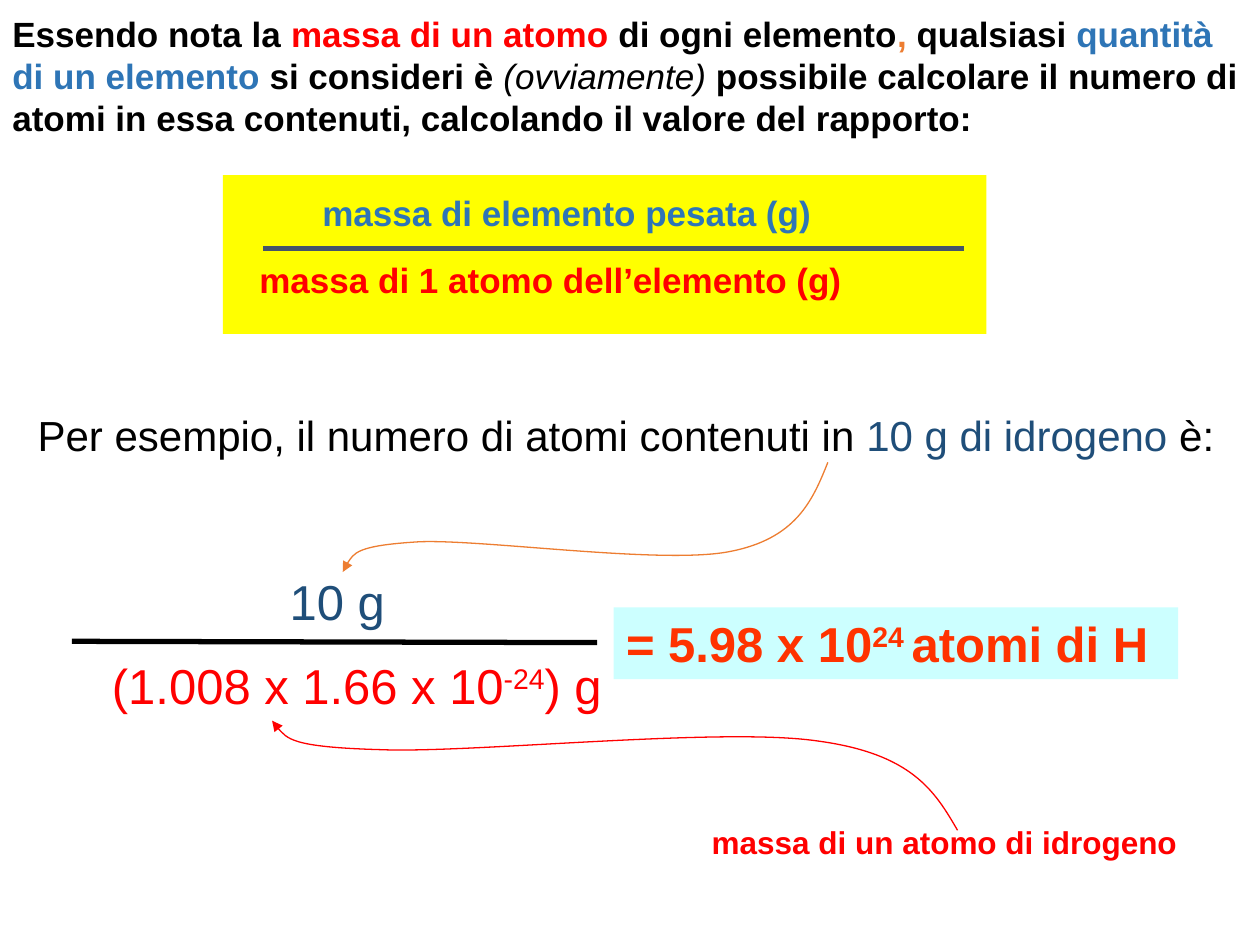
from dataclasses import dataclass

from lxml.etree import SubElement
from pptx import Presentation
from pptx.dml.color import RGBColor
from pptx.enum.shapes import MSO_CONNECTOR, MSO_SHAPE
from pptx.enum.text import MSO_ANCHOR, MSO_AUTO_SIZE, PP_ALIGN
from pptx.oxml.ns import qn
from pptx.util import Inches, Pt

COLUMNS, ROWS = 100, 75
WIDTH, HEIGHT = Inches(10), Inches(7.5)


@dataclass(frozen=True)
class Theme:
    """Colours, type sizes and line widths of the slide."""
    font: str = "Arial"
    black: str = "000000"
    red: str = "FF0000"
    blue: str = "2E75B6"
    navy: str = "1F4E79"
    orange: str = "ED7D31"
    slate: str = "44546A"
    result: str = "FF3300"
    yellow: str = "FFFF00"
    cyan: str = "CCFFFF"
    label: int = 18
    body: int = 20
    example: int = 24
    formula: int = 28
    bar: float = 3
    curve: float = 0.75


THEME = Theme()


def column(number):
    """Return the horizontal length of a number of grid columns."""
    return round(WIDTH * number / COLUMNS)


def row(number):
    """Return the vertical length of a number of grid rows."""
    return round(HEIGHT * number / ROWS)


def place(left, top, width, height):
    """Turn a grid area into slide lengths."""
    return column(left), row(top), column(width), row(height)


def color(value):
    """Return a colour object for a hexadecimal value."""
    return RGBColor.from_string(value)


def write(box, spans, size, bold=False, wrap=True):
    """Fill a box with one paragraph of (text, colour, style) spans."""
    frame = box.text_frame
    frame.word_wrap = wrap
    frame.auto_size = MSO_AUTO_SIZE.SHAPE_TO_FIT_TEXT
    frame.vertical_anchor = MSO_ANCHOR.TOP
    para = frame.paragraphs[0]
    para.alignment = PP_ALIGN.LEFT
    para.font.name, para.font.size, para.font.bold = THEME.font, Pt(size), bold
    for text, ink, *style in spans:
        span = para.add_run()
        span.text = text
        span.font.color.rgb = color(ink)
        if "italic" in style:
            span.font.bold, span.font.italic = False, True
        if "superscript" in style:
            span.font._element.set("baseline", "30000")


def add_text(shapes, area, spans, size, **options):
    """Add a text box."""
    write(shapes.add_textbox(*place(*area)), spans, size, **options)


def add_panel(shapes, area, fill):
    """Add a plain filled rectangle."""
    panel = shapes.add_shape(MSO_SHAPE.RECTANGLE, *place(*area))
    panel.shadow.inherit = False
    panel.fill.solid()
    panel.fill.fore_color.rgb = color(fill)
    panel.line.fill.background()
    return panel


def add_bar(shapes, start, end, ink):
    """Add a fraction bar between two grid points."""
    bar = shapes.add_connector(MSO_CONNECTOR.STRAIGHT, column(start[0]), row(start[1]),
                               column(end[0]), row(end[1]))
    bar.line.color.rgb = color(ink)
    bar.line.width = Pt(THEME.bar)
    SubElement(bar._element.spPr, qn("a:effectLst"))


def add_curved_arrow(shapes, points, ink):
    """Add a Bézier arrow: a start, then three points for each segment."""
    start, *rest = [(column(x), row(y)) for x, y in points]
    builder = shapes.build_freeform(*start)
    builder.add_line_segments(rest, close=False)
    arrow = builder.convert_to_shape()
    arrow.shadow.inherit = False
    arrow.fill.background()
    arrow.line.color.rgb = color(ink)
    arrow.line.width = Pt(THEME.curve)
    SubElement(arrow.line._get_or_add_ln(), qn("a:tailEnd"), type="triangle")
    outline = next(arrow._element.iter(qn("a:path")))
    segments = outline.findall(qn("a:lnTo"))
    for first in range(0, len(segments), 3):
        curve = SubElement(outline, qn("a:cubicBezTo"))
        for segment in segments[first:first + 3]:
            curve.append(segment[0])
            outline.remove(segment)


def add_ratio(shapes):
    """Add the grouped general ratio of masses."""
    group = shapes.add_group_shape().shapes
    add_panel(group, (17.7, 13.9, 60.6, 12.6), THEME.yellow)
    terms = [((19.6, 20, 49.1, 4.4), "massa di 1 atomo dell’elemento (g)", THEME.red),
             ((24.6, 14.7, 41.6, 4.4), "massa di elemento pesata (g)", THEME.blue)]
    for area, text, ink in terms:
        write(add_panel(group, area, THEME.yellow), [(text, ink)], THEME.body,
              bold=True, wrap=False)
    add_bar(group, (20.9, 19.7), (76.5, 19.7), THEME.slate)


def add_example(shapes):
    """Add the worked hydrogen example with its arrows."""
    add_text(shapes, (2, 32, 98, 5),
             [("Per esempio, il numero di atomi contenuti in ", THEME.black),
              ("10 g di idrogeno ", THEME.navy), ("è:", THEME.black)], THEME.example)
    write(add_panel(shapes, (48.7, 48.2, 44.8, 5.7), THEME.cyan),
          [("= 5.98 x 10", THEME.result), ("24 ", THEME.result, "superscript"),
           ("atomi di H", THEME.result)], THEME.formula, bold=True, wrap=False)
    add_text(shapes, (22, 44.9, 9.7, 5.7), [("10 g", THEME.navy)],
             THEME.formula, wrap=False)
    add_text(shapes, (7.9, 51.5, 41.9, 5.7),
             [("(1.008 x 1.66 x 10", THEME.red), ("-24", THEME.red, "superscript"),
              (") g", THEME.red)], THEME.formula, wrap=False)
    add_bar(shapes, (5.7, 50.9), (47.4, 51), THEME.black)
    add_curved_arrow(shapes, [(65.7, 36.7), (64.5, 39.7), (63.2, 42.8), (57.8, 43.8),
                              (52.4, 44.8), (38.4, 42.8), (33.3, 43),
                              (28.2, 43.3), (27.7, 44.3), (27.2, 45.4)], THEME.orange)
    add_text(shapes, (55.5, 64.8, 44.9, 4),
             [("massa di un atomo di idrogeno", THEME.red)], THEME.label, bold=True)
    add_curved_arrow(shapes, [(76, 65.9), (74.2, 62.8), (72.4, 59.8), (64.8, 58.8),
                              (57.1, 57.7), (37.4, 59.8), (30.2, 59.5),
                              (23, 59.3), (22.3, 58.2), (21.6, 57.2)], THEME.red)


def add_statement(shapes):
    """Add the opening statement."""
    add_text(shapes, (0, 0.5, 100, 11.1),
             [("Essendo nota la ", THEME.black), ("massa di un atomo", THEME.red),
              (" di ogni elemento", THEME.black), (", ", THEME.orange),
              ("qualsiasi ", THEME.black), ("quantità di un elemento ", THEME.blue),
              ("si consideri è ", THEME.black),
              ("(ovviamente) ", THEME.black, "italic"),
              ("possibile calcolare il numero di atomi in essa contenuti, "
               "calcolando il valore del rapporto:", THEME.black)],
             THEME.body, bold=True)


def main():
    """Build and save the slide."""
    deck = Presentation()
    deck.slide_width, deck.slide_height = WIDTH, HEIGHT
    page = deck.slides.add_slide(deck.slide_layouts.get_by_name("Blank"))
    add_example(page.shapes)
    add_ratio(page.shapes)
    add_statement(page.shapes)
    deck.save("out.pptx")


if __name__ == "__main__":
    main()
